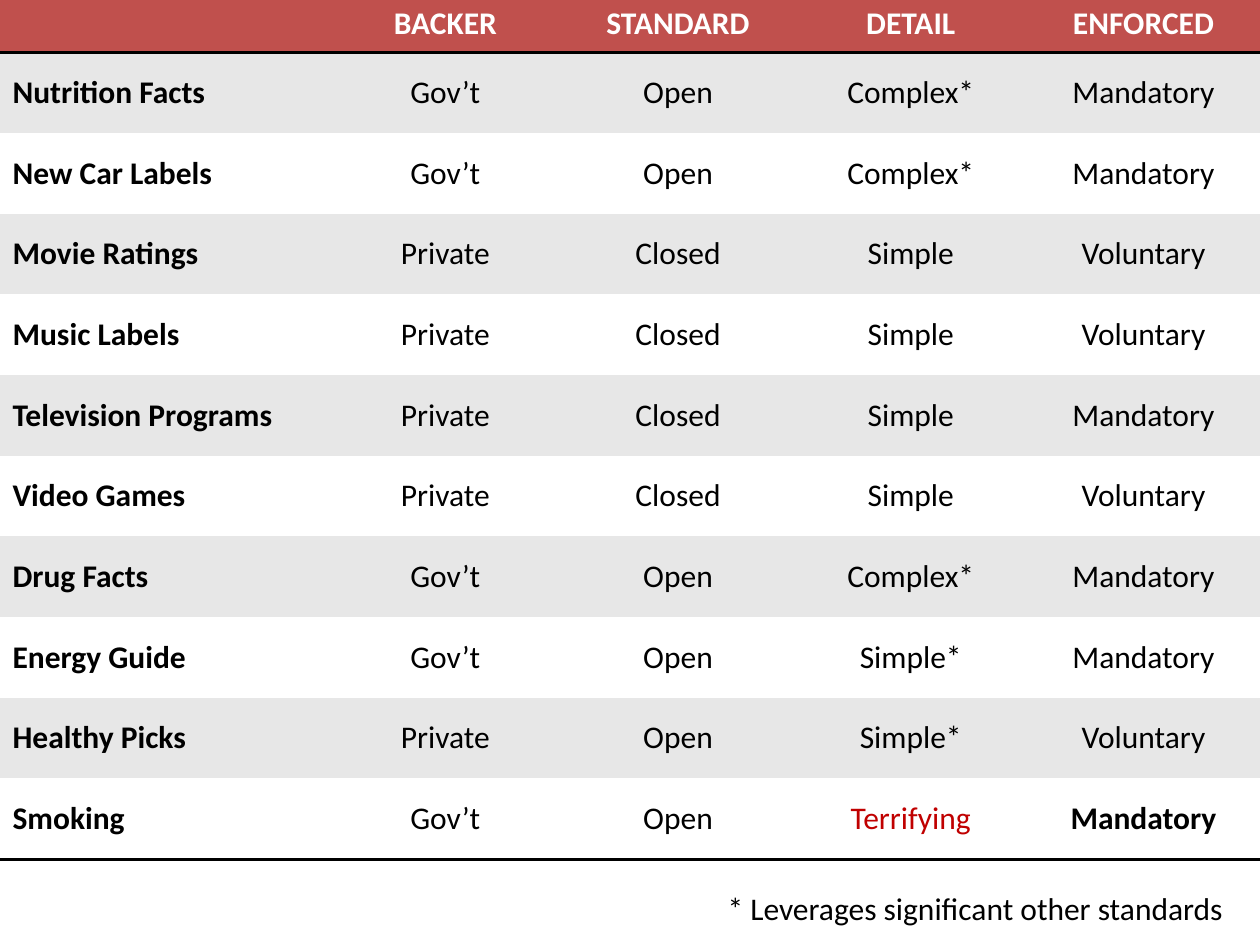
from lxml import etree
from pptx import Presentation
from pptx import util as u
from pptx.dml.color import RGBColor
from pptx.enum import text
from pptx.oxml.ns import qn

HUES = {"head": "C0504D", "band": "E7E7E7", "plain": "FFFFFF",
        "ink": "000000", "alarm": "C00000"}
HEADS = ["", "BACKER", "STANDARD", "DETAIL", "ENFORCED"]
LABELS = [
    ("Nutrition Facts", "Gov’t", "Open", "Complex*", "Mandatory"),
    ("New Car Labels", "Gov’t", "Open", "Complex*", "Mandatory"),
    ("Movie Ratings", "Private", "Closed", "Simple", "Voluntary"),
    ("Music Labels", "Private", "Closed", "Simple", "Voluntary"),
    ("Television Programs", "Private", "Closed", "Simple", "Mandatory"),
    ("Video Games", "Private", "Closed", "Simple", "Voluntary"),
    ("Drug Facts", "Gov’t", "Open", "Complex*", "Mandatory"),
    ("Energy Guide", "Gov’t", "Open", "Simple*", "Mandatory"),
    ("Healthy Picks", "Private", "Open", "Simple*", "Voluntary"),
    ("Smoking", "Gov’t", "Open", "Terrifying", "Mandatory"),
]
NOTE = " * Leverages significant other standards"
WIDTHS = [188] + [133] * 4
HEIGHTS = [31] + [46.1] * len(LABELS)
FONT = {"name": "Calibri", "size": u.Pt(18)}
NO_GRID = "{2D5ABB26-0587-4C30-8999-92F81FD0307C}"


def write(para, words, hue="ink", bold=False):
    run = para.add_run()
    run.text = words
    for key, val in {**FONT, "bold": bold}.items():
        setattr(run.font, key, val)
    run.font.color.rgb = RGBColor.from_string(HUES[hue])


def rule(cell, sides):
    """Draw 2 pt lines on the sides, given in the order T, B."""
    props = cell._tc.get_or_add_tcPr()
    for spot, side in enumerate(sides):
        line = etree.Element(qn("a:ln" + side), w=str(u.Pt(2)))
        fill = etree.SubElement(line, qn("a:solidFill"))
        etree.SubElement(fill, qn("a:srgbClr"), val=HUES["ink"])
        props.insert(spot, line)


deck = Presentation()
deck.slide_width, deck.slide_height = u.Pt(720), u.Pt(540)
slide = deck.slides.add_slide(deck.slide_layouts[6])

# Table frame
rows = [HEADS] + LABELS
frame = slide.shapes.add_table(len(rows), len(HEADS), 0, u.Pt(-1),
                               u.Pt(sum(WIDTHS)), u.Pt(sum(HEIGHTS)))
table = frame.table
table.horz_banding = False
table._tbl.tblPr.find(qn("a:tableStyleId")).text = NO_GRID
for col, width in zip(table.columns, WIDTHS):
    col.width = u.Pt(width)
for row, height in zip(table.rows, HEIGHTS):
    row.height = u.Pt(height)

# Cells
last = len(rows) - 1
for r, row in enumerate(rows):
    back = "head" if r == 0 else "band" if r % 2 else "plain"
    for c, words in enumerate(row):
        cell = table.cell(r, c)
        cell.fill.solid()
        cell.fill.fore_color.rgb = RGBColor.from_string(HUES[back])
        cell.vertical_anchor = (text.MSO_ANCHOR.MIDDLE if r
                                else text.MSO_ANCHOR.TOP)
        para = cell.text_frame.paragraphs[0]
        if c:
            para.alignment = text.PP_ALIGN.CENTER
        if words:
            hue = ("plain" if r == 0 else
                   "alarm" if words == "Terrifying" else "ink")
            strong = r == 0 or c == 0 or (r == last and c == 4)
            write(para, words, hue, strong)
        if r in (0, last):
            rule(cell, "B" if r else "TB")

# Footnote
note = slide.shapes.add_textbox(u.Pt(404.6), u.Pt(504.7), u.Pt(345), u.Pt(29))
note.text_frame.word_wrap = True
note.text_frame.auto_size = text.MSO_AUTO_SIZE.SHAPE_TO_FIT_TEXT
write(note.text_frame.paragraphs[0], NOTE)

deck.save("out.pptx")
